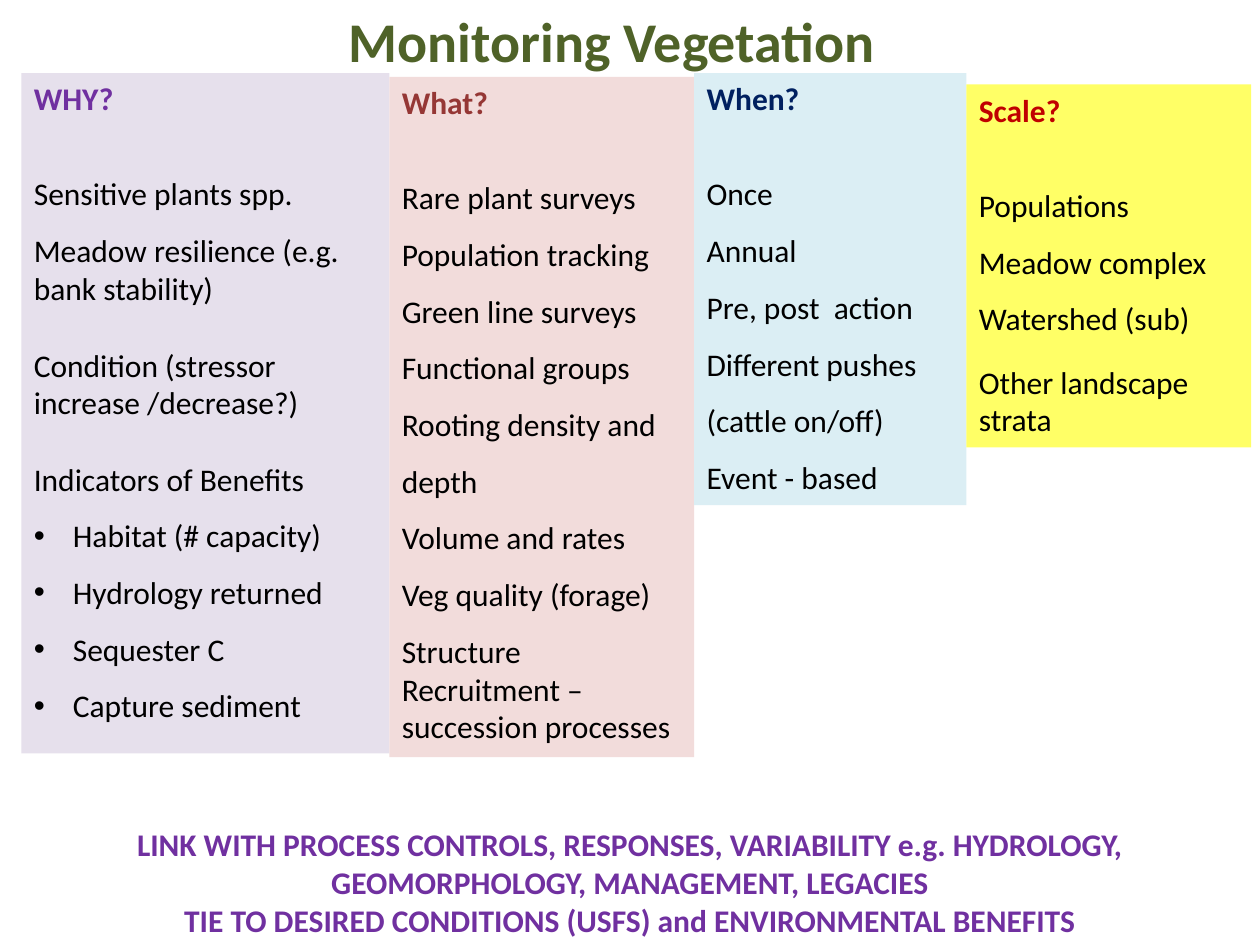
from lxml import etree
from pptx import Presentation
from pptx.dml.color import RGBColor
from pptx.enum import shapes, text
from pptx.oxml.ns import qn
from pptx.util import Inches, Pt

FONT = "Calibri"
BLACK = RGBColor(0x00, 0x00, 0x00)
PURPLE = RGBColor(0x70, 0x30, 0xA0)
GREEN = RGBColor(0x4F, 0x62, 0x28)
BROWN = RGBColor(0x95, 0x37, 0x35)
NAVY = RGBColor(0x00, 0x20, 0x60)
RED = RGBColor(0xC0, 0x00, 0x00)
LAVENDER = RGBColor(0xE6, 0xE0, 0xEC)
PINK = RGBColor(0xF2, 0xDC, 0xDB)
PALE_BLUE = RGBColor(0xDB, 0xEE, 0xF4)
YELLOW = RGBColor(0xFF, 0xFF, 0x66)

LINE = 22  # height in points of one 18 pt line

# Each item: text, line spacing, space before in points, bulleted
WHY = [
    ("Sensitive plants spp.", 1.5, LINE, False),
    ("Meadow resilience (e.g. bank stability)", 1, 11, False),
    ("Condition (stressor increase /decrease?)", 1, LINE, False),
    ("Indicators of Benefits", 1, LINE, False),
    ("Habitat (# capacity)", 1.5, 0, True),
    ("Hydrology returned", 1.5, 0, True),
    ("Sequester C", 1.5, 0, True),
    ("Capture sediment", 1.5, 0, True),
]
WHAT = [
    ("Rare plant surveys", 1.5, LINE, False),
    ("Population tracking", 1.5, 0, False),
    ("Green line surveys", 1.5, 0, False),
    ("Functional groups", 1.5, 0, False),
    ("Rooting density and depth", 1.5, 0, False),
    ("Volume and rates", 1.5, 0, False),
    ("Veg quality (forage)", 1.5, 0, False),
    ("Structure", 1.5, 0, False),
    ("Recruitment – succession processes", 1, 0, False),
]
WHEN = [
    ("Once", 1.5, LINE, False),
    ("Annual", 1.5, 0, False),
    ("Pre, post  action", 1.5, 0, False),
    ("Different pushes (cattle on/off)", 1.5, 0, False),
    ("Event - based", 1.5, 0, False),
]
SCALE = [
    ("Populations", 1.5, LINE, False),
    ("Meadow complex", 1.5, 0, False),
    ("Watershed (sub)", 1.5, 0, False),
    ("Other landscape strata", 1, 14.6, False),
]

# Each column: heading, heading colour, fill, top, width, height, items
COLUMNS = [
    ("WHY?", PURPLE, LAVENDER, 0.58, 2.92, 5.4, WHY),
    ("What?", BROWN, PINK, 0.61, 2.42, 5.4, WHAT),
    ("When?", NAVY, PALE_BLUE, 0.58, 2.16, 3.43, WHEN),
    ("Scale?", RED, YELLOW, 0.67, 2.26, 2.88, SCALE),
]


def set_paragraph(p, content, color, size=18, bold=False, align=text.PP_ALIGN.LEFT):
    p.text = content
    p.alignment = align
    for r in p.runs:
        r.font.name = FONT
        r.font.size = Pt(size)
        r.font.bold = bold
        r.font.color.rgb = color


def set_bullet(p):
    pPr = p._p.get_or_add_pPr()
    pPr.set("marL", str(Inches(0.31)))
    pPr.set("indent", str(-Inches(0.31)))
    etree.SubElement(pPr, qn("a:buFont"), typeface="Arial")
    etree.SubElement(pPr, qn("a:buChar"), char="•")


def prepare_frame(sp):
    tf = sp.text_frame
    tf.word_wrap = True
    tf.auto_size = text.MSO_AUTO_SIZE.SHAPE_TO_FIT_TEXT
    tf.vertical_anchor = text.MSO_ANCHOR.TOP
    return tf


def add_column(s, box, heading, color, fill, items):
    sp = s.shapes.add_shape(shapes.MSO_SHAPE.RECTANGLE, *map(Inches, box))
    sp.shadow.inherit = False
    sp.fill.solid()
    sp.fill.fore_color.rgb = fill
    sp.line.fill.background()
    tf = prepare_frame(sp)
    set_paragraph(tf.paragraphs[0], heading, color, bold=True)
    for content, spacing, before, bulleted in items:
        p = tf.add_paragraph()
        set_paragraph(p, content, BLACK)
        p.line_spacing = float(spacing)
        p.space_before = Pt(before)
        if bulleted:
            set_bullet(p)


def add_bold_text(s, box, lines, color, size, align):
    tf = prepare_frame(s.shapes.add_textbox(*map(Inches, box)))
    tf.text = "\n".join(lines)
    for p, line in zip(tf.paragraphs, lines):
        set_paragraph(p, line, color, size, True, align)


def main():
    prs = Presentation()
    prs.slide_width, prs.slide_height = Inches(10), Inches(7.5)
    s = prs.slides.add_slide(prs.slide_layouts[6])

    left = 0.17
    for heading, color, fill, top, width, height, items in COLUMNS:
        add_column(s, (left, top, width, height), heading, color, fill, items)
        left += width

    add_bold_text(s, (0, 6.5, 10, 1.01), [
        "LINK WITH PROCESS CONTROLS, RESPONSES, VARIABILITY e.g. HYDROLOGY, "
        "GEOMORPHOLOGY, MANAGEMENT, LEGACIES",
        "TIE TO DESIRED CONDITIONS (USFS) and ENVIRONMENTAL BENEFITS",
    ], PURPLE, 18, text.PP_ALIGN.CENTER)
    add_bold_text(s, (2.67, 0, 4.75, 0.64), ["Monitoring Vegetation"],
                  GREEN, 32, text.PP_ALIGN.LEFT)
    prs.save("out.pptx")


if __name__ == "__main__":
    main()
